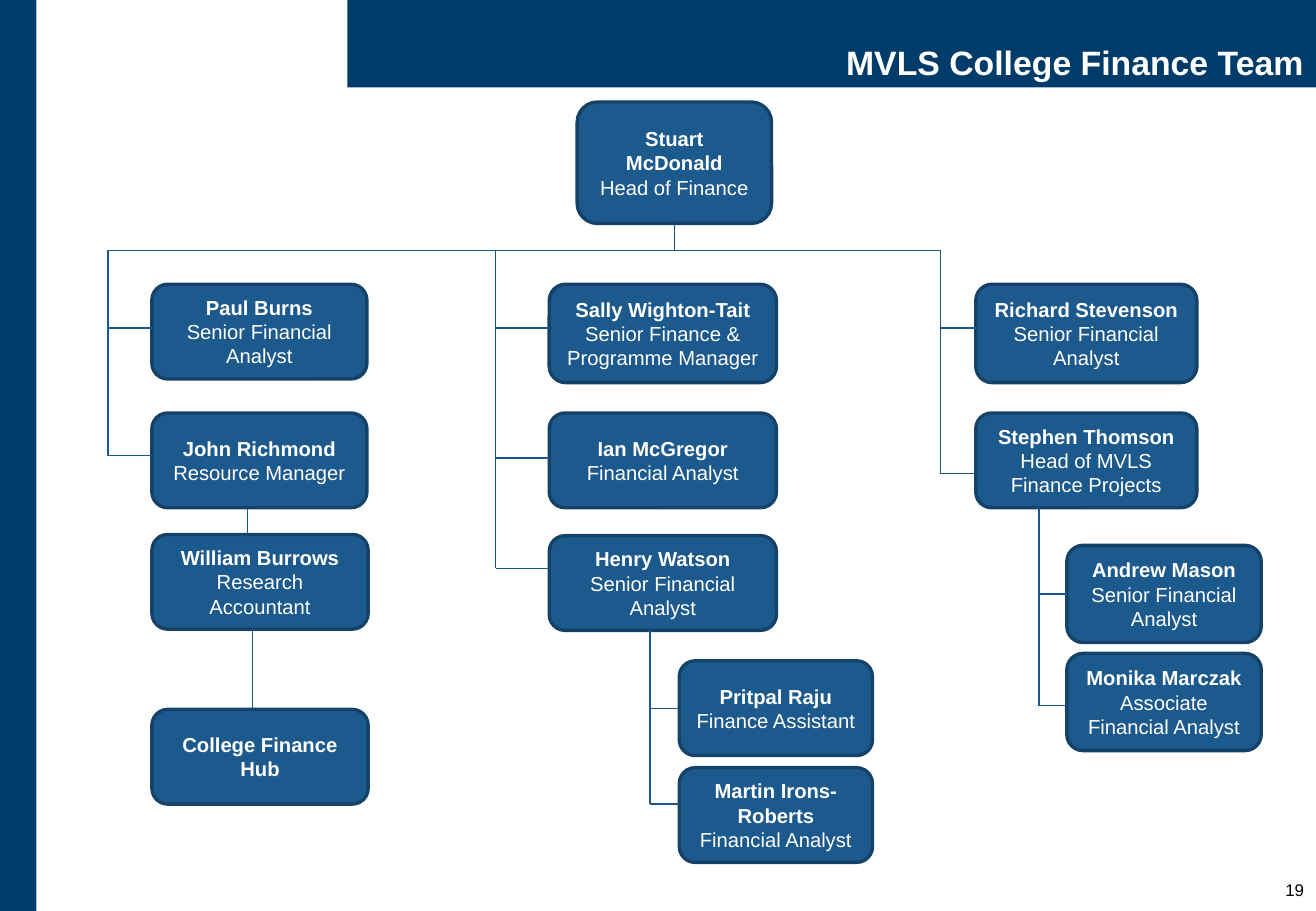
import dataclasses

import pptx
import pptx.dml.color
import pptx.enum.shapes
import pptx.enum.text
import pptx.oxml.ns
import pptx.util
import lxml.etree

PX = 9144  # 100 px to the inch
SLIDE_W, SLIDE_H = 1083, 750
BUS_Y = 206
TOP, LEFT, BOTTOM = 0, 1, 2

SHAPE = pptx.enum.shapes.MSO_SHAPE
ALIGN = pptx.enum.text.PP_ALIGN
ANCHOR = pptx.enum.text.MSO_ANCHOR


@dataclasses.dataclass(frozen=True)
class Theme:
    font: str = "Arial"
    band: str = "003C69"
    card: str = "1C598C"
    border: str = "154268"
    link: str = "19578C"
    light: str = "FFFFFF"
    dark: str = "000000"
    title_size: int = 20
    card_size: int = 12
    number_size: int = 10
    border_width: float = 2
    link_width: float = 0.75


THEME = Theme()


def px(*values):
    return [pptx.util.Emu(v * PX) for v in values]


def rgb(value):
    return pptx.dml.color.RGBColor.from_string(value)


def add_block(slide, kind, box, fill, border=None):
    sp = slide.shapes.add_shape(kind, *px(*box))
    sp.shadow.inherit = False
    sp.fill.solid()
    sp.fill.fore_color.rgb = rgb(fill)
    if border:
        sp.line.color.rgb = rgb(border)
        sp.line.width = pptx.util.Pt(THEME.border_width)
    else:
        sp.line.fill.background()
    return sp


def format_paragraph(p, align, size, color, bold=False):
    p.alignment = align
    for r in p.runs:
        r.font.name = THEME.font
        r.font.size = pptx.util.Pt(size)
        r.font.bold = bold
        r.font.color.rgb = rgb(color)


def add_link(slide, x1, y1, x2, y2):
    line = slide.shapes.add_connector(
        pptx.enum.shapes.MSO_CONNECTOR.STRAIGHT, *px(x1, y1, x2, y2))
    line.line.color.rgb = rgb(THEME.link)
    line.line.width = pptx.util.Pt(THEME.link_width)
    lxml.etree.SubElement(line._element.spPr, pptx.oxml.ns.qn("a:effectLst"))
    return line


def add_card(slide, box, name, role):
    sp = add_block(slide, SHAPE.ROUNDED_RECTANGLE, box, THEME.card, THEME.border)
    tf = sp.text_frame
    tf.word_wrap = True
    tf.vertical_anchor = ANCHOR.MIDDLE
    tf.text = f"{name}\n{role}" if role else name
    for i, p in enumerate(tf.paragraphs):
        format_paragraph(p, ALIGN.CENTER, THEME.card_size, THEME.light, bold=i == 0)
    return sp


def add_header(slide, box):
    x, y, w, h = box
    sp = add_block(slide, SHAPE.RECTANGLE, box, THEME.band)
    tf = sp.text_frame
    tf.word_wrap = True
    tf.vertical_anchor = ANCHOR.BOTTOM
    tf.margin_left, tf.margin_top, tf.margin_right, tf.margin_bottom = px(8, 4, 10, 4)
    tf.text = "MVLS College Finance Team"
    p = tf.paragraphs[0]
    p.line_spacing = 0.9
    format_paragraph(p, ALIGN.RIGHT, THEME.title_size, THEME.light, bold=True)


def add_page_number(slide, box):
    tf = slide.shapes.add_textbox(*px(*box)).text_frame
    tf.word_wrap = True
    tf.text = "19"
    format_paragraph(tf.paragraphs[0], ALIGN.RIGHT, THEME.number_size, THEME.dark)


def add_head(slide, box):
    x, y, w, h = box
    card = add_card(slide, box, "Stuart McDonald", "Head of Finance")
    line = add_link(slide, x + w // 2, y + h, x + w // 2, BUS_Y)
    line.begin_connect(card, BOTTOM)


def add_team(slide, box, rail_gap, members):
    """Hang cards from a rail left of the box.

    Each member is name, role, card offset, card height and branch offset,
    with both offsets measured down from the top of the box.
    """
    x, y, w = box
    rail = x - rail_gap
    for name, role, offset, height, branch in members:
        card = add_card(slide, (x, y + offset, w, height), name, role)
        line = add_link(slide, rail, y + branch, x, y + branch)
        if branch == offset + height // 2:
            line.end_connect(card, LEFT)
    add_link(slide, rail, y, rail, y + members[-1][-1])


def add_research_chain(slide, box):
    """Stack the two lower cards of the left column, linked from above."""
    x, y, w = box
    add_card(slide, (x, y + 22, w, 78), "William Burrows", "Research Accountant")
    add_card(slide, (x, y + 166, w, 78), "College Finance Hub", None)
    add_link(slide, x + 79, y, x + 79, y + 22)
    add_link(slide, x + 83, y + 100, x + 83, y + 166)


def main():
    prs = pptx.Presentation()
    prs.slide_width, prs.slide_height = px(SLIDE_W, SLIDE_H)
    slide = prs.slides.add_slide(prs.slide_layouts[6])

    add_block(slide, SHAPE.RECTANGLE, (0, 0, 30, SLIDE_H), THEME.band)
    add_header(slide, (286, 0, SLIDE_W - 286, 72))
    add_page_number(slide, (SLIDE_W - 87, 719, 87, 31))

    add_head(slide, (475, 84, 160, 100))
    add_link(slide, 89, BUS_Y, 774, BUS_Y)

    add_team(slide, (125, BUS_Y, 177), 36, [
        ("Paul Burns", "Senior Financial Analyst", 28, 78, 64),
        ("John Richmond", "Resource Manager", 134, 78, 169),
    ])
    add_research_chain(slide, (125, 418, 178))

    add_team(slide, (452, BUS_Y, 187), 44, [
        ("Sally Wighton-Tait", "Senior Finance & Programme Manager", 28, 81, 64),
        ("Ian McGregor", "Financial Analyst", 134, 78, 171),
        ("Henry Watson", "Senior Financial Analyst", 235, 78, 262),
    ])
    add_team(slide, (559, 519, 159), 24, [
        ("Pritpal Raju", "Finance Assistant", 25, 78, 64),
        ("Martin Irons-Roberts", "Financial Analyst", 113, 78, 143),
    ])

    add_team(slide, (803, BUS_Y, 182), 29, [
        ("Richard Stevenson", "Senior Financial Analyst", 28, 81, 64),
        ("Stephen Thomson", "Head of MVLS Finance Projects", 134, 78, 184),
    ])
    add_team(slide, (878, 418, 160), 23, [
        ("Andrew Mason", "Senior Financial Analyst", 31, 80, 71),
        ("Monika Marczak", "Associate Financial Analyst", 120, 80, 163),
    ])

    prs.save("out.pptx")


if __name__ == "__main__":
    main()
